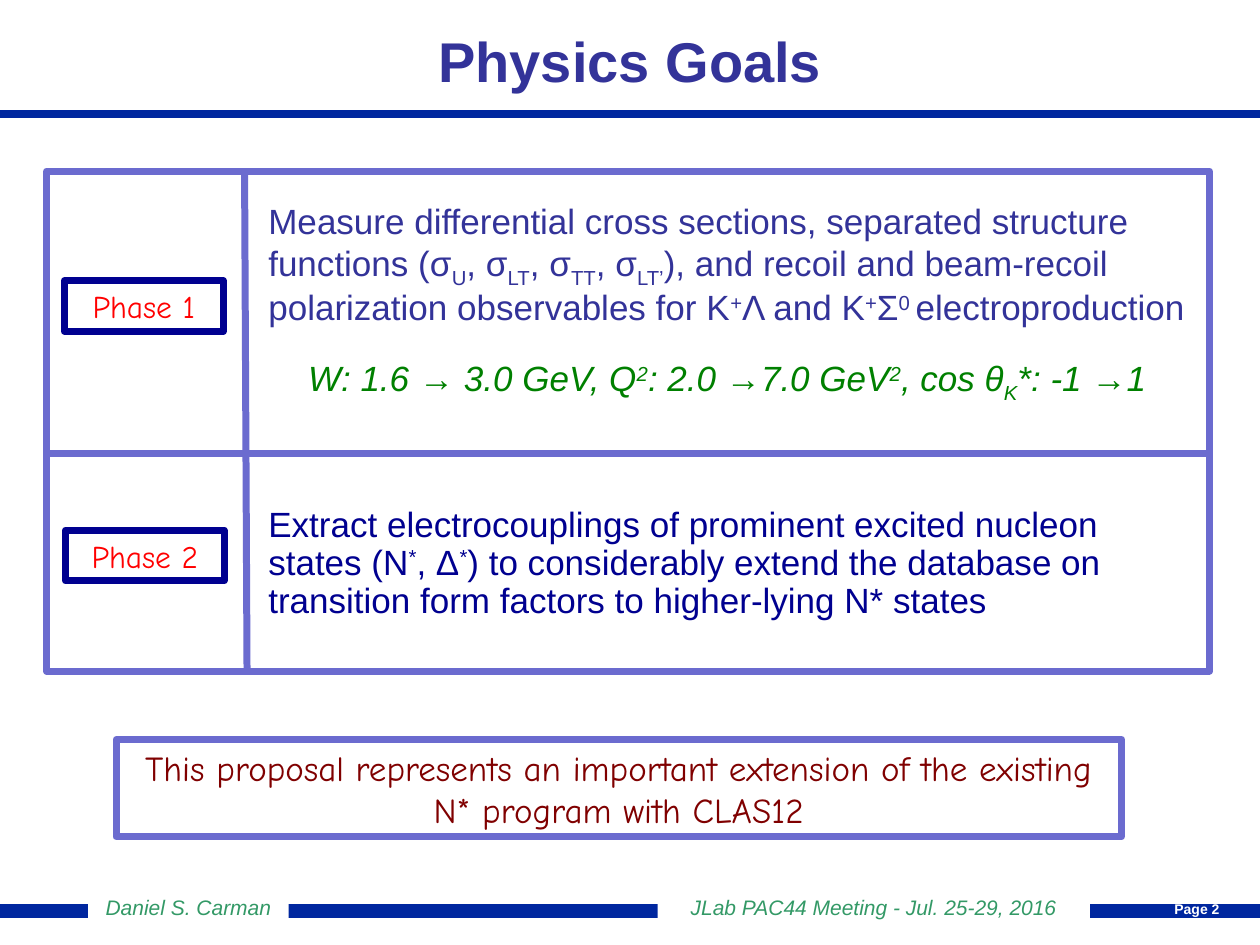
from lxml import etree
from pptx import Presentation
from pptx import util as u
from pptx.dml.color import RGBColor
from pptx.enum import shapes, text
from pptx.oxml import ns

theme = {
    "sans": "Arial", "hand": "Comic Neue",
    "bar": "00279F", "frame": "6B6BCF", "navy": "000090", "title": "333399",
    "green": "008000", "foot": "339966", "red": "FF0000", "wine": "800000",
    "white": "FFFFFF",
    "head": 32, "body": 20, "label": 18, "small": 12, "tiny": 8,
}
MID, TOP = text.MSO_ANCHOR.MIDDLE, text.MSO_ANCHOR.TOP
CENTER, LEFT = text.PP_ALIGN.CENTER, text.PP_ALIGN.LEFT
BASE = {"sub": "-25000", "sup": "30000"}

deck = Presentation()
deck.slide_width, deck.slide_height = u.Cm(25.4), u.Cm(19.05)
slide = deck.slides.add_slide(deck.slide_layouts[5])


def box(area, fill=None, edge=None, anchor=MID, pad=(0.25, 0.13, 0.25, 0.13)):
    """Add a rectangle and return its text frame."""
    shape = slide.shapes.add_shape(
        shapes.MSO_SHAPE.RECTANGLE, *[u.Cm(x) for x in area])
    shape.shadow.inherit = False
    for part, color in ((shape.fill, fill), (shape.line.fill, edge)):
        if color:
            part.solid()
            part.fore_color.rgb = RGBColor.from_string(theme[color])
        else:
            part.background()
    if edge:
        shape.line.width = u.Pt(4)
    frame = shape.text_frame
    sides = ("margin_left", "margin_top", "margin_right", "margin_bottom")
    for side, size in zip(sides, pad):
        setattr(frame, side, u.Cm(size))
    frame.word_wrap, frame.vertical_anchor = True, anchor
    return frame


def write(par, runs, color, size, face="sans", align=CENTER, **style):
    """Fill a paragraph with (text, kind) runs; kind is sub, sup, arrow or None."""
    par.alignment = align
    for words, kind in runs:
        run = par.add_run()
        run.text = words
        form = {"name": theme[face], "size": u.Pt(theme[size]),
                "bold": False, "italic": False, **style}
        if kind == "arrow":
            form.update(bold=True, italic=False)
        for key, value in form.items():
            setattr(run.font, key, value)
        run.font.color.rgb = RGBColor.from_string(theme[color])
        if kind in BASE:
            run._r.get_or_add_rPr().set("baseline", BASE[kind])


# Title
title = slide.shapes.title
place = {"left": 0, "top": 0.33, "width": 25.4, "height": 1.78}
for key, value in place.items():
    setattr(title, key, u.Cm(value))
title.text_frame.vertical_anchor = MID
write(title.text_frame.paragraphs[0], [("Physics Goals", None)],
      "title", "head", bold=True)

# Goals of both phases: runs, colour, space before, indent, style
goals = [
    ([("Measure differential cross sections, separated structure functions (σ", None),
      ("U", "sub"), (", σ", None), ("LT", "sub"), (", σ", None), ("TT", "sub"),
      (", σ", None), ("LT’", "sub"), ("), and recoil and beam-recoil", None)],
     "title", 0, 0, {}),
    ([("polarization observables for K", None), ("+", "sup"), ("Λ and K", None),
      ("+", "sup"), ("Σ", None), ("0 ", "sup"), ("electroproduction", None)],
     "title", 3, 0, {}),
    ([("W: 1.6 ", None), ("→ ", "arrow"), ("3.0 GeV, Q", None), ("2", "sup"),
      (": 2.0 ", None), ("→", "arrow"), ("7.0 GeV", None), ("2", "sup"),
      (", cos θ", None), ("K", "sub"), ("*: -1 ", None), ("→", "arrow"), ("1", None)],
     "green", 16.8, 0.8, {"italic": True}),
    ([("Extract electrocouplings of prominent excited nucleon states (N", None),
      ("*", "sup"), (", Δ", None), ("*", "sup"),
      (") to considerably extend the database on transition form factors"
       " to higher-lying N* states", None)],
     "navy", 61, 0, {}),
]
frame = box((5.16, 3.99, 19.18, 9.14), fill="white", anchor=TOP)
for i, (runs, color, gap, indent, style) in enumerate(goals):
    par = frame.add_paragraph() if i else frame.paragraphs[0]
    par.line_spacing, par.space_before = 0.9, u.Pt(gap)
    if indent:
        par._p.get_or_add_pPr().set("marL", str(u.Cm(indent)))
    write(par, runs, color, "body", align=LEFT, **style)

# Phase labels
for label, left, top in (("Phase 1", 1.3, 5.66), ("Phase 2", 1.32, 10.69)):
    frame = box((left, top, 3.2, 1.02), edge="navy")
    write(frame.paragraphs[0], [(label, None)], "red", "label", "hand")

# Outer frame and closing statement
box((0.94, 3.45, 23.44, 10.08), edge="frame")
frame = box((2.34, 14.91, 20.27, 1.96), edge="frame")
write(frame.paragraphs[0],
      [("This proposal represents an important extension of the existing"
        " N* program with CLAS12", None)], "wine", "body", "hand")

# Frame dividers, title rule and footer bar
rules = [
    ((0.99, 9.14, 24.41, 9.14), "frame", 4),
    ((4.93, 3.43, 4.98, 13.56), "frame", 4),
    ((0, 2.29, 25.4, 2.29), "bar", 4.5),
    ((0, 18.36, 25.4, 18.36), "bar", 8),
]
for ends, color, width in rules:
    rule = slide.shapes.add_connector(
        shapes.MSO_CONNECTOR.STRAIGHT, *[u.Cm(x) for x in ends])
    rule.line.width = u.Pt(width)
    rule.line.color.rgb = RGBColor.from_string(theme[color])
    etree.SubElement(rule._element.spPr, ns.qn("a:effectLst"))

# Footer texts over the bar
notes = [
    ("Daniel S. Carman", (1.78, 17.81, 4.04, 0.76)),
    ("JLab PAC44 Meeting - Jul. 25-29, 2016", (13.26, 17.81, 8.71, 1.12)),
]
for words, area in notes:
    frame = box(area, fill="white", anchor=TOP, pad=(0, 0.32, 0, 0))
    frame.paragraphs[0].line_spacing = 0.8
    write(frame.paragraphs[0], [(words, None)], "foot", "small", italic=True)

# Page number
frame = box((23.57, 18.16, 1.12, 0.33), pad=(0, 0, 0, 0))
frame.word_wrap = False
write(frame.paragraphs[0], [("Page 2", None)], "white", "tiny", bold=True)

deck.save("out.pptx")
